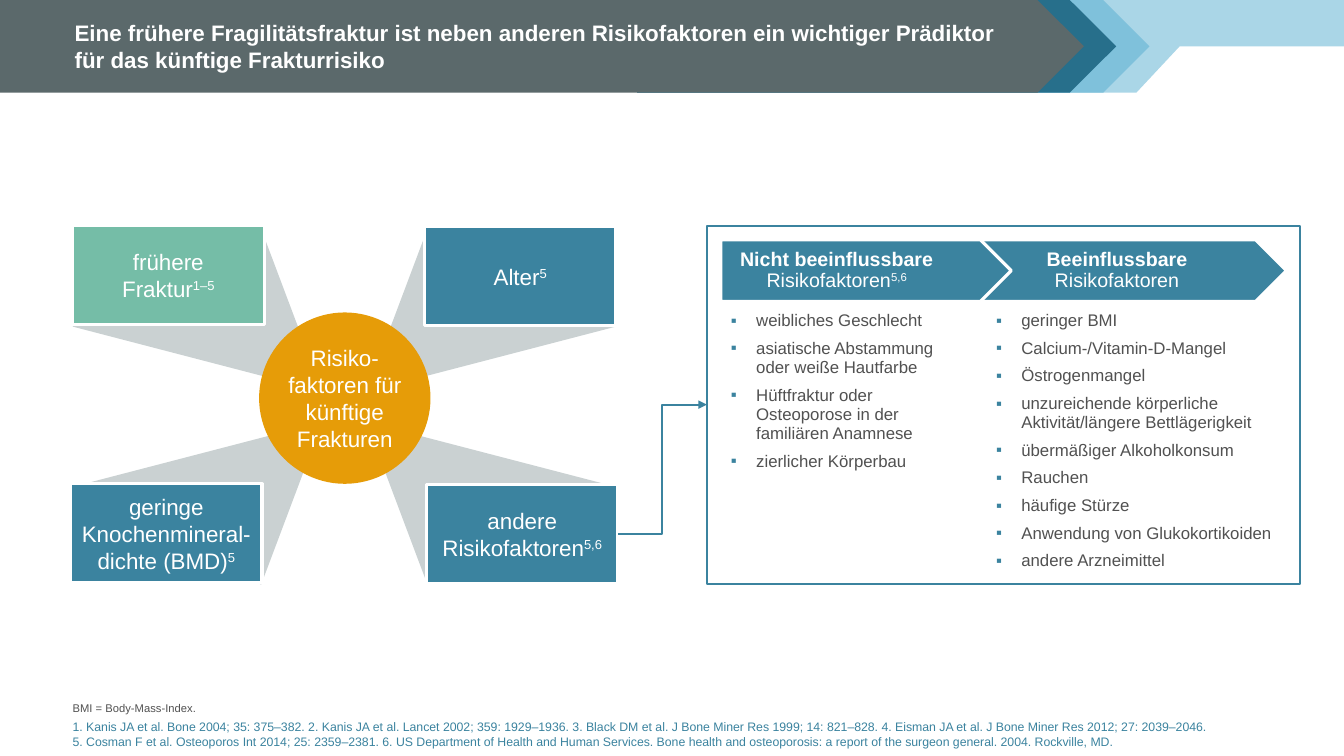
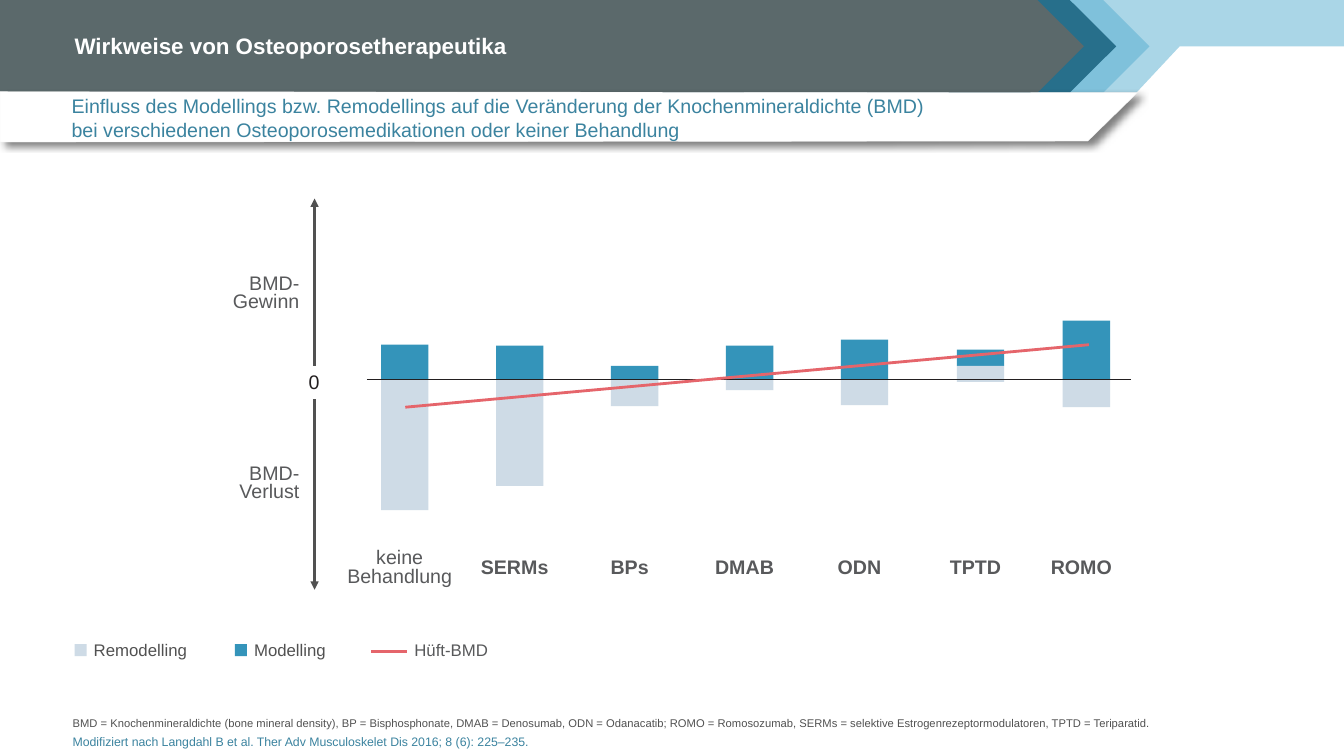
from dataclasses import dataclass

from lxml.etree import SubElement
from pptx import Presentation
from pptx.dml.color import RGBColor
from pptx.enum.shapes import MSO_CONNECTOR as LINE, MSO_SHAPE as SHAPE
from pptx.enum.text import MSO_ANCHOR as ANCHOR, MSO_AUTO_SIZE as FIT, PP_ALIGN as ALIGN
from pptx.oxml.ns import qn
from pptx.util import Inches, Pt


@dataclass(frozen=True)
class Theme:
    font: str = "Arial"
    # colours
    white: str = "FFFFFF"
    slate: str = "5B696B"
    navy: str = "276F8B"
    sky: str = "7FC1DB"
    pale: str = "AAD6E7"
    teal: str = "3B839F"
    green: str = "75BDA7"
    orange: str = "E69C08"
    ray: str = "CAD1D2"
    edge: str = "F2F2F2"
    text: str = "515151"
    label: str = "58595B"
    black: str = "231F20"
    modelling: str = "3494BA"
    remodelling: str = "CEDBE6"
    hip: str = "E5656B"
    # type sizes
    title: float = 16
    heading: float = 14
    body: float = 12
    source: float = 8.8
    note: float = 8


THEME = Theme()


def put(holder, values):
    for name, value in values.items():
        setattr(holder, name, value)


def inches(*lengths):
    return [Inches(length) for length in lengths]


class Builder:
    """Holds the theme, the deck and the current page."""

    def __init__(self, theme):
        self.theme = theme
        self.deck = Presentation()
        put(self.deck, {"slide_width": Inches(13.33), "slide_height": Inches(7.5)})
        self.page = None

    def new_page(self, layout, title):
        self.page = self.deck.slides.add_slide(self.deck.slide_layouts[layout])
        self.placeholder(0, (0.74, 0.12, 9.4, 0.67), [title], insets=(0, 0.05, 0.1, 0.05),
                         size=self.theme.title, colour=self.theme.white, bold=True)

    def paint(self, shape, fill=None, line=None, width=1.0):
        shape.shadow.inherit = False
        if fill:
            shape.fill.solid()
            shape.fill.fore_color.rgb = RGBColor.from_string(fill)
        else:
            shape.fill.background()
        if line:
            shape.line.color.rgb = RGBColor.from_string(line)
            shape.line.width = Pt(width)
        else:
            shape.line.fill.background()
        return shape

    def set_text(self, holder, lines, insets=(0, 0, 0, 0), anchor=ANCHOR.MIDDLE,
                 bullet=None, **look):
        """Each line is text or (text, look); what follows ^ is superscript."""
        frame = holder.text_frame
        sides = ("left", "top", "right", "bottom")
        put(frame, {"word_wrap": True, "auto_size": FIT.NONE, "vertical_anchor": anchor})
        put(frame, {f"margin_{side}": Inches(gap) for side, gap in zip(sides, insets)})
        for index, line in enumerate(lines):
            text, own = (line, {}) if isinstance(line, str) else line
            style = {"align": ALIGN.LEFT, "spacing": 1.0, "before": 0, "bold": False,
                     "colour": self.theme.white} | look | own
            para = frame.add_paragraph() if index else frame.paragraphs[0]
            put(para, {"alignment": style["align"], "line_spacing": style["spacing"],
                       "space_before": Pt(style["before"])})
            self.mark(para, bullet)
            base, _, raised = text.partition("^")
            for part, baseline in ((base, None), (raised, "30000")):
                if not part:
                    continue
                span = para.add_run()
                span.text = part
                put(span.font, {"name": self.theme.font, "size": Pt(style["size"]),
                                "bold": style["bold"]})
                span.font.color.rgb = RGBColor.from_string(style["colour"])
                if baseline:
                    span._r.get_or_add_rPr().set("baseline", baseline)
        return holder

    def mark(self, para, bullet):
        props = para._p.get_or_add_pPr()
        indent = Inches(0.25) if bullet else 0
        props.set("marL", str(indent))
        props.set("indent", str(-indent))
        if bullet:
            colour = SubElement(props, qn("a:buClr"))
            SubElement(colour, qn("a:srgbClr"), val=self.theme.teal)
            SubElement(props, qn("a:buChar"), char=bullet)
        else:
            SubElement(props, qn("a:buNone"))

    def placeholder(self, idx, place, lines, **look):
        holder = next(p for p in self.page.placeholders if p.placeholder_format.idx == idx)
        put(holder, dict(zip(("left", "top", "width", "height"), inches(*place))))
        return self.set_text(holder, lines, **look)

    def bullets(self, idx, place, lines):
        self.placeholder(idx, place, lines, insets=(0.1, 0.05, 0.1, 0.05), anchor=ANCHOR.TOP,
                         bullet="▪", size=self.theme.body, colour=self.theme.text,
                         spacing=0.95, before=6)

    def footnote(self, note, *sources):
        look = {"size": self.theme.source, "colour": self.theme.teal}
        lines = [(text, look | {"before": 0 if index else 3})
                 for index, text in enumerate(sources)]
        self.placeholder(1, (0.72, 6.28, 12.17, 1.15), [note, *lines],
                         insets=(0, 0.05, 0.1, 0), anchor=ANCHOR.BOTTOM,
                         size=self.theme.note, colour=self.theme.text)

    def text(self, place, lines, **look):
        return self.set_text(self.page.shapes.add_textbox(*inches(*place)), lines, **look)

    def shape(self, kind, place, fill=None, line=None, width=1.0):
        return self.paint(self.page.shapes.add_shape(kind, *inches(*place)), fill, line, width)

    def outline(self, points, fill, line=None, width=1.0):
        start, *rest = [inches(*point) for point in points]
        pen = self.page.shapes.build_freeform(*start)
        pen.add_line_segments(rest, close=True)
        return self.paint(pen.convert_to_shape(), fill, line, width)

    def line(self, start, end, colour, width, arrow=False, kind=LINE.STRAIGHT):
        link = self.page.shapes.add_connector(kind, *inches(*start, *end))
        link.line.color.rgb = RGBColor.from_string(colour)
        link.line.width = Pt(width)
        if arrow:
            SubElement(link.get_or_add_ln(), qn("a:tailEnd"), type="triangle")
        SubElement(link.element.spPr, qn("a:effectLst"))
        return link

    def cast_shadow(self, shape):
        effects = shape.element.spPr.find(qn("a:effectLst"))
        shadow = SubElement(effects, qn("a:outerShdw"), blurRad=str(Pt(5)), dist=str(Pt(4)),
                            dir="2400000", algn="tl", rotWithShape="0")
        colour = SubElement(shadow, qn("a:srgbClr"), val="000000")
        SubElement(colour, qn("a:alpha"), val="50000")

    def band_to_master(self):
        """Draws the title band and moves it to the slide master."""
        t = self.theme
        band = [self.outline([(6.32, 0.92), (11.27, 0.92), (11.7, 0.46), (13.33, 0.46),
                              (13.33, 0), (6.32, 0)], t.pale)]
        for left, width, fill in ((6.32, 5.08, t.sky), (6.32, 4.75, t.navy),
                                  (0, 10.75, t.slate)):
            band.append(self.shape(SHAPE.PENTAGON, (left, 0, width, 0.92), fill))
        tree = self.deck.slide_master.shapes.element
        for index, part in enumerate(band):
            part.element.nvSpPr.cNvPr.id = 100 + index
            tree.insert(2 + index, part.element)

    def drop_empty(self):
        for holder in list(self.page.placeholders):
            if not holder.text_frame.text:
                holder.element.getparent().remove(holder.element)


def risk_page(b):
    t = b.theme
    b.new_page(4, "Eine frühere Fragilitätsfraktur ist neben anderen Risikofaktoren "
                  "ein wichtiger Prädiktor für das künftige Frakturrisiko")
    b.band_to_master()

    # Rays, mirrored about the centre of the circle
    ray = [(2.59, 2.27), (0.72, 3.24), (2.68, 3.75), (3.03, 3.44)]
    for flip_x in (False, True):
        for flip_y in (False, True):
            b.outline([(6.83 - x if flip_x else x, 8.07 - y if flip_y else y)
                       for x, y in ray], t.ray)

    # Factor boxes and the circle
    for left, top, fill, lines in (
            (0.72, 2.24, t.green, ["frühere", "Fraktur^1–5"]),
            (0.7, 4.8, t.teal, ["geringe Knochenmineral-dichte (BMD)^5"]),
            (4.21, 2.25, t.teal, ["Alter^5"]),
            (4.23, 4.81, t.teal, ["andere Risikofaktoren^5,6"])):
        box = b.shape(SHAPE.RECTANGLE, (left, top, 1.9, 0.98), fill, t.white, 2.25)
        b.set_text(box, lines, insets=(0.08, 0.04, 0.08, 0.04), size=t.title,
                   align=ALIGN.CENTER)
    circle = b.shape(SHAPE.OVAL, (2.57, 3.1, 1.7, 1.7), t.orange)
    b.set_text(circle, ["Risiko-faktoren für künftige Frakturen"], size=t.title,
               align=ALIGN.CENTER)

    # Panel, joined to the last box
    panel = b.shape(SHAPE.RECTANGLE, (7.01, 2.24, 5.88, 3.55), None, t.teal, 1.5)
    link = b.line((6.13, 5.3), (7.01, 4.02), t.teal, 1.5, arrow=True, kind=LINE.ELBOW)
    link.begin_connect(box, 3)
    link.end_connect(panel, 1)

    # Headings and lists
    for left, width, inset, heading, second in (
            (9.67, 3.09, 0.12, "Beeinflussbare", "Risikofaktoren"),
            (7.15, 2.88, 0.43, "Nicht beeinflussbare", "Risikofaktoren^5,6")):
        arrow = b.shape(SHAPE.PENTAGON, (left, 2.38, width, 0.61), t.teal, t.white, 2.25)
        b.set_text(arrow, [(heading, {"bold": True}), second], insets=(0, 0, inset, 0),
                   size=t.heading, align=ALIGN.CENTER, spacing=0.9)
    b.bullets(2, (7.15, 3.04, 2.25, 1.7), [
        "weibliches Geschlecht", "asiatische Abstammung oder weiße Hautfarbe",
        "Hüftfraktur oder Osteoporose in der familiären Anamnese", "zierlicher Körperbau"])
    b.bullets(4, (9.78, 3.04, 2.98, 2.69), [
        "geringer BMI", "Calcium-/Vitamin-D-Mangel", "Östrogenmangel",
        "unzureichende körperliche Aktivität/längere Bettlägerigkeit",
        "übermäßiger Alkoholkonsum", "Rauchen", "häufige Stürze",
        "Anwendung von Glukokortikoiden", "andere Arzneimittel"])

    b.footnote(
        "BMI = Body-Mass-Index.",
        "1. Kanis JA et al. Bone 2004; 35: 375–382. 2. Kanis JA et al. Lancet 2002; 359: "
        "1929–1936. 3. Black DM et al. J Bone Miner Res 1999; 14: 821–828. "
        "4. Eisman JA et al. J Bone Miner Res 2012; 27: 2039–2046.",
        "5. Cosman F et al. Osteoporos Int 2014; 25: 2359–2381. 6. US Department of Health and "
        "Human Services. Bone health and osteoporosis: a report of the surgeon general. 2004. "
        "Rockville, MD.")
    b.drop_empty()


def therapy_page(b):
    t = b.theme
    b.new_page(1, "Wirkweise von Osteoporosetherapeutika")

    # Subtitle strip
    strip = b.outline([(11.28, 0.92), (10.79, 1.4), (0, 1.41), (0, 0.91)],
                      t.white, t.edge, 0.25)
    b.cast_shadow(strip)
    b.set_text(strip, ["Einfluss des Modellings bzw. Remodellings auf die Veränderung der "
                       "Knochenmineraldichte (BMD)",
                       "bei verschiedenen Osteoporosemedikationen oder keiner Behandlung"],
               insets=(0.71, 0.02, 0, 0), size=t.heading, colour=t.teal)

    # Vertical axis
    for place, lines, colour, spacing in (
            ((1.39, 2.74, 1.58, 0.38), ["BMD-", "Gewinn"], t.label, Pt(12.6)),
            ((1.59, 3.66, 1.58, 0.25), ["0"], t.black, 1.0),
            ((1.39, 4.62, 1.58, 0.38), ["BMD-", "Verlust"], t.label, Pt(12.6))):
        b.text(place, lines, insets=(0, 0.01, 0, 0), anchor=ANCHOR.TOP, size=t.heading,
               colour=colour, align=ALIGN.RIGHT, spacing=spacing)
    for start, end in ((3.63, 1.97), (3.96, 5.85)):
        b.line((3.12, start), (3.12, end), t.text, 1.5, arrow=True)

    # Bars: name, left, top, boundary, bottom
    width, slot = 0.47, 1.14
    for name, left, top, middle, bottom in (
            ("keine Behandlung", 3.78, 3.42, 3.77, 5.06),
            ("SERMs", 4.92, 3.43, 3.77, 4.82),
            ("BPs", 6.06, 3.63, 3.77, 4.03),
            ("DMAB", 7.2, 3.43, 3.77, 3.87),
            ("ODN", 8.34, 3.37, 3.77, 4.02),
            ("TPTD", 9.49, 3.47, 3.63, 3.79),
            ("ROMO", 10.54, 3.18, 3.77, 4.04)):
        b.shape(SHAPE.RECTANGLE, (left, top, width, middle - top), t.modelling)
        b.shape(SHAPE.RECTANGLE, (left, middle, width, bottom - middle), t.remodelling)
        b.text((left + (width - slot) / 2 - 0.05, 5.42, slot, 0.44), [name], size=t.heading,
               colour=t.label, bold=" " not in name, align=ALIGN.CENTER, spacing=Pt(13.6))
    b.line((3.64, 3.76), (11.22, 3.76), t.black, 0.5)
    b.line((4.02, 4.04), (10.8, 3.42), t.hip, 2)

    # Legend
    for left, fill in ((0.74, t.remodelling), (2.33, t.modelling)):
        b.shape(SHAPE.RECTANGLE, (left, 6.39, 0.12, 0.12), fill)
    b.line((3.68, 6.46), (4.04, 6.46), t.hip, 2)
    for left, name, colour in ((0.93, "Remodelling", t.text), (2.52, "Modelling", t.text),
                               (4.11, "Hüft-BMD", t.label)):
        b.text((left, 6.3, 1.2, 0.3), [name], size=t.body, colour=colour)

    b.footnote(
        "BMD = Knochenmineraldichte (bone mineral density), BP = Bisphosphonate, "
        "DMAB = Denosumab, ODN = Odanacatib; ROMO = Romosozumab, SERMs = selektive "
        "Estrogenrezeptormodulatoren, TPTD = Teriparatid.",
        "Modifiziert nach Langdahl B et al. Ther Adv Musculoskelet Dis 2016; 8 (6): 225–235.")
    b.drop_empty()


def main():
    builder = Builder(THEME)
    risk_page(builder)
    therapy_page(builder)
    builder.deck.save("out.pptx")


if __name__ == "__main__":
    main()
